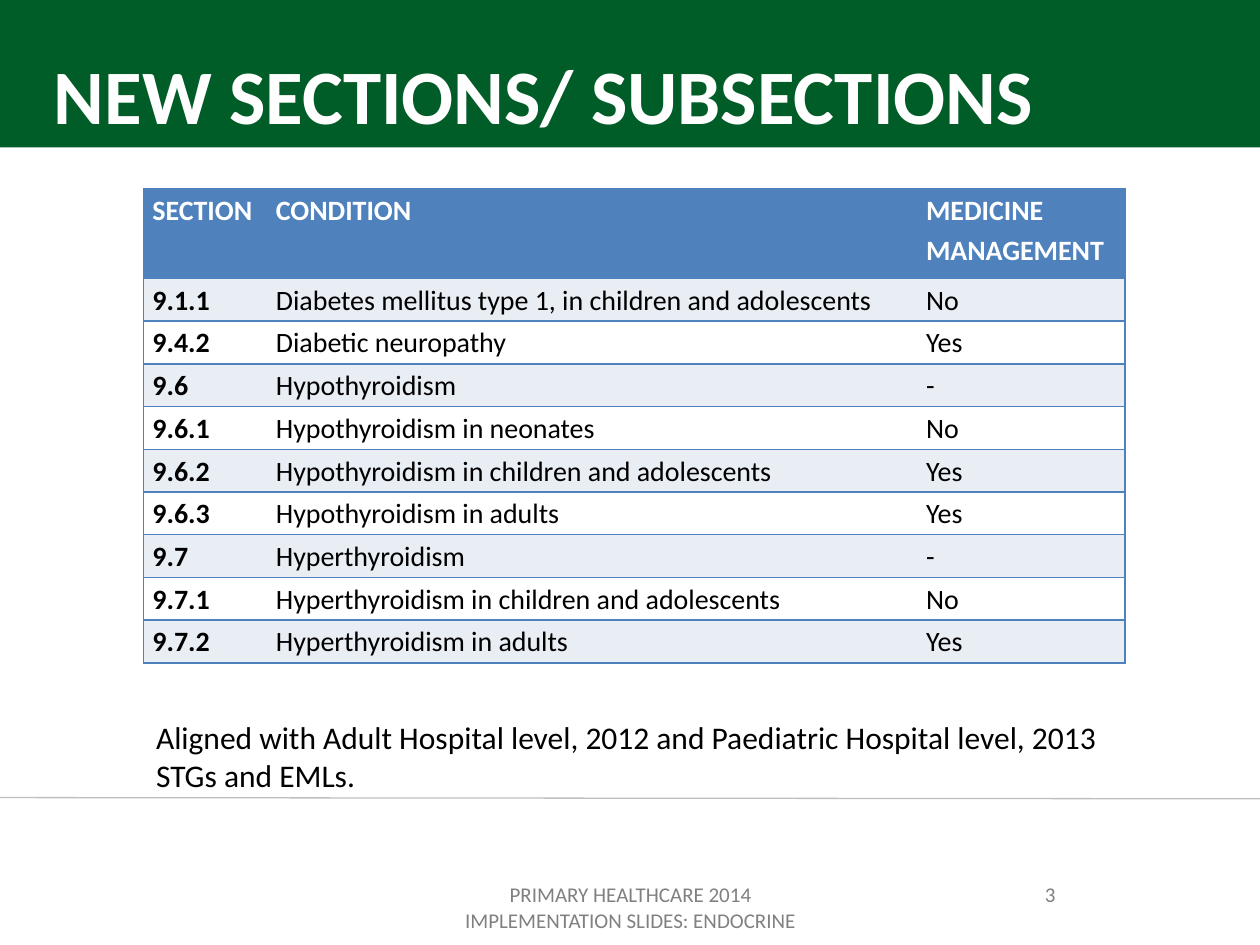
from dataclasses import dataclass

from lxml.etree import SubElement
from pptx import Presentation
from pptx.dml.color import RGBColor
from pptx.enum.shapes import MSO_CONNECTOR, MSO_SHAPE
from pptx.enum.text import MSO_ANCHOR, PP_ALIGN
from pptx.oxml.ns import qn
from pptx.slide import Slide
from pptx.util import Inches, Pt

GREEN = RGBColor(0x00, 0x5D, 0x28)
BLUE = RGBColor(0x4F, 0x81, 0xBD)
PALE_BLUE = RGBColor(0xE9, 0xED, 0xF4)
WHITE = RGBColor(0xFF, 0xFF, 0xFF)
BLACK = RGBColor(0x00, 0x00, 0x00)
GREY = RGBColor(0x80, 0x80, 0x80)
RULE_GREY = RGBColor(0xBF, 0xBF, 0xBF)

HEADINGS = ("SECTION", "CONDITION", "MEDICINE MANAGEMENT")
SECTIONS = (
    ("9.1.1", "Diabetes mellitus type 1, in children and adolescents", "No"),
    ("9.4.2", "Diabetic neuropathy", "Yes"),
    ("9.6", "Hypothyroidism", "-"),
    ("9.6.1", "Hypothyroidism in neonates", "No"),
    ("9.6.2", "Hypothyroidism in children and adolescents", "Yes"),
    ("9.6.3", "Hypothyroidism in adults", "Yes"),
    ("9.7", "Hyperthyroidism", "-"),
    ("9.7.1", "Hyperthyroidism in children and adolescents", "No"),
    ("9.7.2", "Hyperthyroidism in adults", "Yes"),
)


def grid(*units):
    return [Inches(unit / 10) for unit in units]


@dataclass
class SlideBuilder:
    page: Slide
    font: str = "Calibri"
    table_size: int = 16
    border_width: int = 1

    def add_span(self, para, text, size, color, bold=False):
        span = para.add_run()
        span.text = text
        span.font.name = self.font
        span.font.size = Pt(size)
        span.font.bold = bold
        span.font.color.rgb = color

    def band(self, place, color):
        band = self.page.shapes.add_shape(MSO_SHAPE.RECTANGLE, *grid(*place))
        band.shadow.inherit = False
        band.fill.solid()
        band.fill.fore_color.rgb = color
        band.line.fill.background()

    def rule(self, ends, color, width):
        rule = self.page.shapes.add_connector(MSO_CONNECTOR.STRAIGHT, *grid(*ends))
        rule.line.color.rgb = color
        rule.line.width = Pt(width)
        SubElement(rule._element.spPr, qn("a:effectLst"))

    def text(self, place, text, size, color, bold=False, align=PP_ALIGN.LEFT, inset=0.05):
        box = self.page.shapes.add_textbox(*grid(*place))
        frame = box.text_frame
        frame.word_wrap = True
        frame.vertical_anchor = MSO_ANCHOR.TOP
        frame.margin_top = Inches(inset)
        para = frame.paragraphs[0]
        para.alignment = align
        self.add_span(para, text, size, color, bold)

    def borders(self, cell, shown):
        properties = cell._tc.get_or_add_tcPr()
        for side in "LRTB":
            line = SubElement(properties, qn(f"a:ln{side}"), w=str(Pt(self.border_width)))
            if side in shown:
                fill = SubElement(line, qn("a:solidFill"))
                SubElement(fill, qn("a:srgbClr"), val=str(BLUE))
            else:
                SubElement(line, qn("a:noFill"))

    def cell(self, cell, text, fill, color, bold, shown):
        self.borders(cell, shown)
        cell.fill.solid()
        cell.fill.fore_color.rgb = fill
        cell.margin_left = cell.margin_right = Inches(0.07)
        cell.margin_top = cell.margin_bottom = 0
        para = cell.text_frame.paragraphs[0]
        para.alignment = PP_ALIGN.JUSTIFY
        para.line_spacing = 1.15
        self.add_span(para, text, self.table_size, color, bold)

    def table(self, place, widths, heights, rows):
        table = self.page.shapes.add_table(len(rows), len(widths), *grid(*place)).table
        for column, width in zip(table.columns, grid(*widths)):
            column.width = width
        for row, height in zip(table.rows, grid(*heights)):
            row.height = height
        outer = {0: "LTB", len(widths) - 1: "RTB"}
        for row_index, row in enumerate(rows):
            header = row_index == 0
            fill = BLUE if header else PALE_BLUE if row_index % 2 else WHITE
            color = WHITE if header else BLACK
            for column_index, text in enumerate(row):
                bold = header or column_index == 0
                shown = outer.get(column_index, "TB")
                self.cell(table.cell(row_index, column_index), text, fill, color, bold, shown)


def main():
    deck = Presentation()
    deck.slide_width, deck.slide_height = grid(100, 75)
    builder = SlideBuilder(deck.slides.add_slide(deck.slide_layouts[6]))
    builder.band((0, 0, 100, 11.7), GREEN)
    builder.rule((0, 63.3, 100, 63.4), RULE_GREY, 0.75)
    builder.text((3.3, 3, 90, 12.4), "NEW SECTIONS/ SUBSECTIONS", 44, WHITE, bold=True, inset=0.08)
    builder.table(
        (11.4, 15, 78, 37.6),
        (9.8, 51.6, 16.5),
        [7.1] + [3.39] * len(SECTIONS),
        (HEADINGS, *SECTIONS),
    )
    builder.text(
        (11.4, 56.5, 81.1, 7.1),
        "Aligned with Adult Hospital level, 2012 and Paediatric Hospital level, 2013 STGs and EMLs.",
        18,
        BLACK,
    )
    footers = (
        (34.2, 31.7, "PRIMARY HEALTHCARE 2014 IMPLEMENTATION SLIDES: ENDOCRINE"),
        (71.7, 23.3, "3"),
    )
    for left, width, text in footers:
        builder.text((left, 69.5, width, 4), text, 12, GREY, align=PP_ALIGN.CENTER)
    deck.save("out.pptx")


if __name__ == "__main__":
    main()
